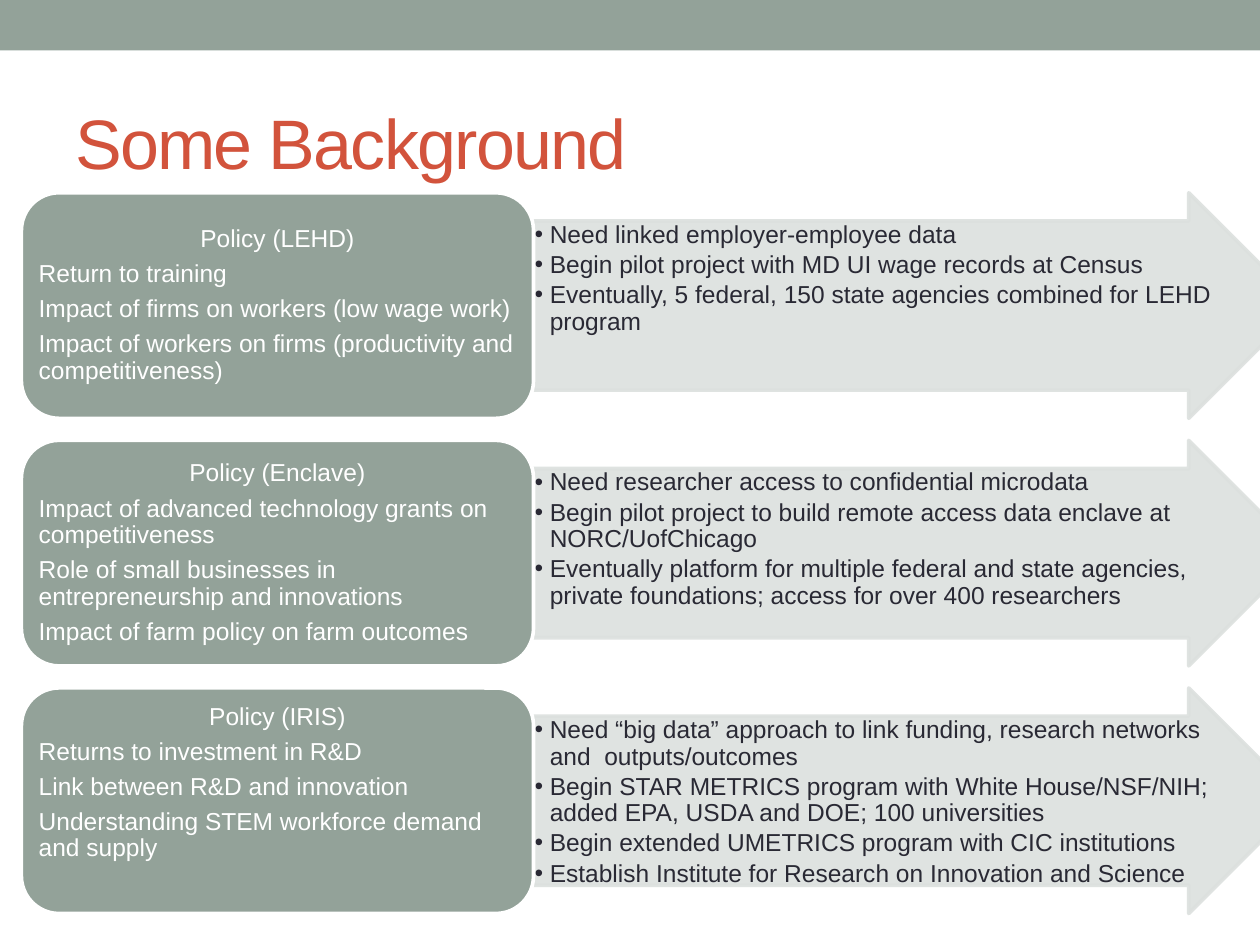
from dataclasses import dataclass

from lxml.etree import SubElement
from pptx import Presentation
from pptx.dml.color import RGBColor
from pptx.enum.shapes import MSO_SHAPE
from pptx.enum.text import MSO_ANCHOR, PP_ALIGN
from pptx.oxml.ns import qn
from pptx.util import Inches, Pt


@dataclass(frozen=True)
class Theme:
    sage: RGBColor = RGBColor.from_string("93A299")
    mist: RGBColor = RGBColor.from_string("DCE0DE")
    rust: RGBColor = RGBColor.from_string("D2533C")
    ink: RGBColor = RGBColor.from_string("292934")
    white: RGBColor = RGBColor.from_string("FFFFFF")
    font: str = "Arial"
    title_size: int = 40
    body_size: int = 14
    outline: float = 2.08


THEME = Theme()

POLICIES = [
    (
        [
            "Policy (LEHD)",
            "Return to training",
            "Impact of firms on workers (low wage work)",
            "Impact of workers on firms (productivity and competitiveness)",
        ],
        [
            "Need linked employer-employee data",
            "Begin pilot project with MD UI wage records at Census",
            "Eventually, 5 federal, 150 state agencies combined for LEHD program",
        ],
        0.03,
    ),
    (
        [
            "Policy (Enclave)",
            "Impact of advanced technology grants on competitiveness",
            "Role of small businesses in entrepreneurship and innovations",
            "Impact of farm policy on farm outcomes",
        ],
        [
            "Need researcher access to confidential microdata",
            "Begin pilot project to build remote access data enclave at NORC/UofChicago",
            "Eventually platform for multiple federal and state agencies, "
            "private foundations; access for over 400 researchers",
        ],
        0.03,
    ),
    (
        [
            "Policy (IRIS)",
            "Returns to investment in R&D",
            "Link between R&D and innovation",
            "Understanding STEM workforce demand and supply",
        ],
        [
            "Need “big data” approach to link funding, research networks and  outputs/outcomes",
            "Begin STAR METRICS program with White House/NSF/NIH; "
            "added EPA, USDA and DOE; 100 universities",
            "Begin extended UMETRICS program with CIC institutions",
            "Establish Institute for Research on Innovation and Science",
        ],
        0.31,
    ),
]


def apply_format(target, values):
    for name, value in values.items():
        setattr(target, name, value)


def add_panel(page, preset, box, fill, line=None):
    panel = page.shapes.add_shape(preset, *map(Inches, box))
    panel.shadow.inherit = False
    panel.fill.solid()
    panel.fill.fore_color.rgb = fill
    if line is None:
        panel.line.fill.background()
    else:
        panel.line.color.rgb = line
        panel.line.width = Pt(THEME.outline)
    return panel


def set_frame(frame, insets, anchor):
    sides = ("margin_left", "margin_top", "margin_right", "margin_bottom")
    values = dict(zip(sides, map(Inches, insets)))
    apply_format(frame, values | {"word_wrap": True, "vertical_anchor": anchor})


def write_lines(frame, lines, color, size, para_format):
    for index, line in enumerate(lines):
        para = frame.add_paragraph() if index else frame.paragraphs[0]
        apply_format(para, {"alignment": PP_ALIGN.LEFT} | para_format)
        span = para.add_run()
        span.text = line
        apply_format(span.font, {"name": THEME.font, "size": Pt(size)})
        span.font.color.rgb = color


def add_bullets(frame, indent):
    for para in frame.paragraphs:
        properties = para._p.get_or_add_pPr()
        properties.set("marL", str(Inches(indent)))
        properties.set("indent", str(-Inches(indent)))
        SubElement(properties, qn("a:buFont"), typeface=THEME.font)
        SubElement(properties, qn("a:buChar"), char="•")


def set_opacity(shape, percent):
    for color in shape._element.spPr.iter(qn("a:srgbClr")):
        SubElement(color, qn("a:alpha"), val=str(percent * 1000))


def add_title(page, box):
    frame = page.shapes.add_textbox(*map(Inches, box)).text_frame
    set_frame(frame, (0.1, 0.05, 0.1, 0.05), MSO_ANCHOR.MIDDLE)
    write_lines(frame, ["Some Background"], THEME.rust, THEME.title_size, {})
    frame.paragraphs[0].runs[0].font._element.set("spc", "-100")


def add_arrow(page, box, steps):
    arrow = add_panel(page, MSO_SHAPE.RIGHT_ARROW, box, THEME.mist, THEME.mist)
    arrow.adjustments[0] = 0.75
    arrow.adjustments[1] = 0.5
    set_opacity(arrow, 90)
    frame = arrow.text_frame
    set_frame(frame, (0.01, 0.01, 0.01, 0.01), MSO_ANCHOR.TOP)
    spacing = {"line_spacing": 0.9, "space_after": Pt(2.1)}
    write_lines(frame, steps, THEME.ink, THEME.body_size, spacing)
    add_bullets(frame, 0.12)


def add_card(page, box, lines, bottom_inset):
    card = add_panel(page, MSO_SHAPE.ROUNDED_RECTANGLE, box, THEME.sage, THEME.white)
    frame = card.text_frame
    set_frame(frame, (0.05, 0.03, 0.05, bottom_inset), MSO_ANCHOR.MIDDLE)
    spacing = {"line_spacing": 0.9, "space_after": Pt(4.9)}
    write_lines(frame, lines, THEME.white, THEME.body_size, spacing)
    frame.paragraphs[0].alignment = PP_ALIGN.CENTER


def add_policy_rows(page, box):
    left, top, width, height = box
    row_height = 1.79
    card_width = 0.4 * width
    pitch = (height - row_height) / (len(POLICIES) - 1)
    for index, (lines, steps, bottom_inset) in enumerate(POLICIES):
        row_top = top + index * pitch
        arrow_box = (left + card_width, row_top, width - card_width, row_height)
        add_arrow(page, arrow_box, steps)
        add_card(page, (left, row_top, card_width, row_height), lines, bottom_inset)


def main():
    deck = Presentation()
    apply_format(deck, {"slide_width": Inches(10), "slide_height": Inches(7.5)})
    page = deck.slides.add_slide(deck.slide_layouts[6])
    add_panel(page, MSO_SHAPE.RECTANGLE, (0, 0, 10, 0.4), THEME.sage)
    add_title(page, (0.5, 0.58, 9, 1.08))
    add_policy_rows(page, (0.17, 1.53, 10.16, 5.72))
    deck.save("out.pptx")


if __name__ == "__main__":
    main()
